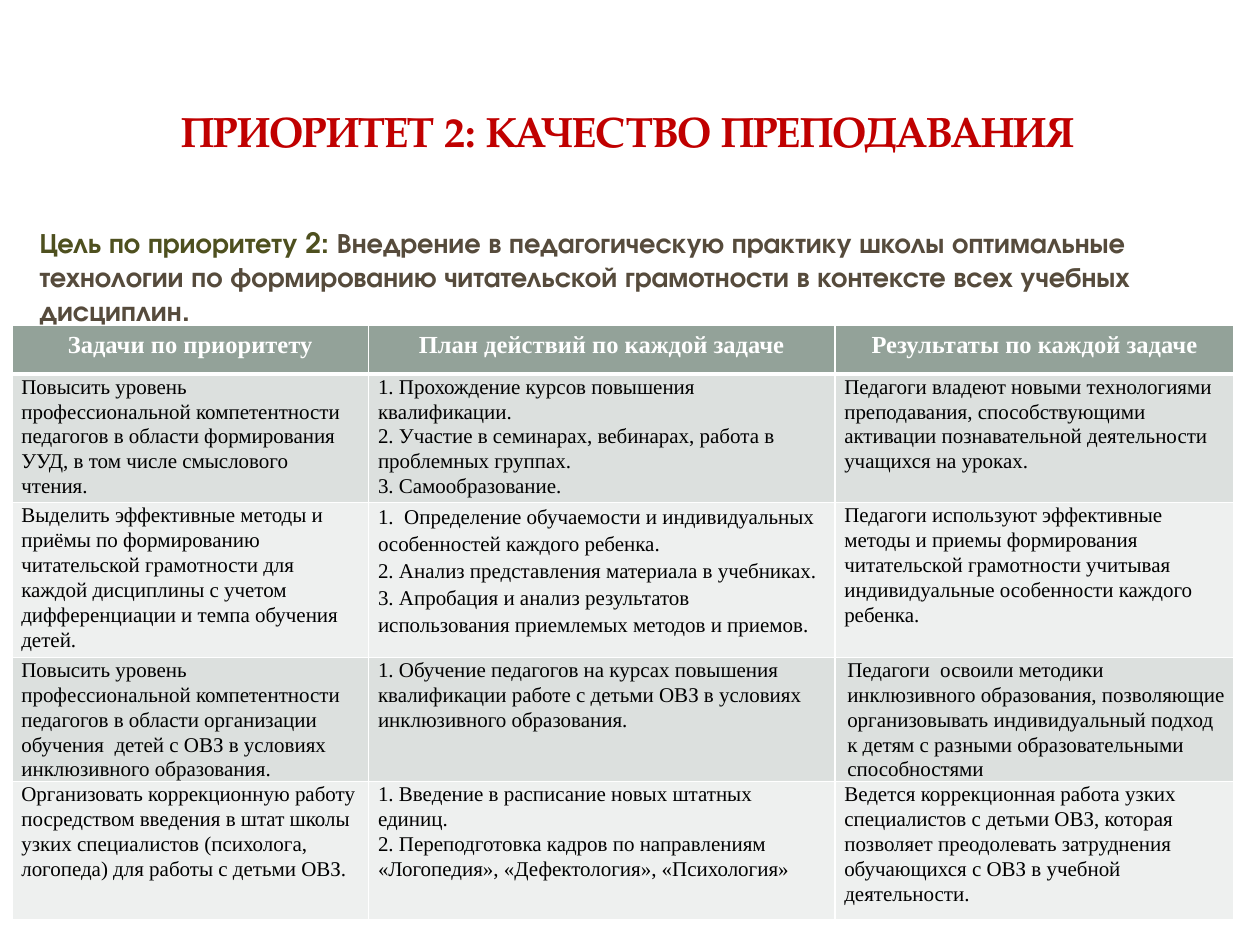
"""Build a slide on a school's teaching-quality priority with a table of tasks, actions and results."""
from lxml import etree
from pptx import Presentation
from pptx.dml.color import RGBColor
from pptx.enum.shapes import MSO_SHAPE
from pptx.enum.text import MSO_ANCHOR, PP_ALIGN
from pptx.oxml.ns import qn
from pptx.util import Cm, Pt

CENTER = PP_ALIGN.CENTER
LEFT = PP_ALIGN.LEFT
MIDDLE = MSO_ANCHOR.MIDDLE
TOP = MSO_ANCHOR.TOP
RECTANGLE = MSO_SHAPE.RECTANGLE
ROUNDED_RECTANGLE = MSO_SHAPE.ROUNDED_RECTANGLE

TITLE_FONT = {"name": "TeX Gyre Pagella", "size": Pt(24), "bold": True}
GOAL_FONT = {"name": "TeX Gyre Adventor", "size": Pt(16), "bold": True}
HEADER_FONT = {"name": "Times New Roman", "size": Pt(14), "bold": True}
BODY_FONT = {"name": "Times New Roman", "size": Pt(12), "bold": False}
BODY_MARGINS = {"margin_left": Cm(0.19), "margin_right": Cm(0.18), "margin_top": 0, "margin_bottom": 0}

BACKDROPS = [
    (ROUNDED_RECTANGLE, 0.25, 0.28, 24.89, 18.52, 100),
    (RECTANGLE, 0.76, 0.76, 23.88, 3.68, 83),
    (RECTANGLE, 1.04, 1.04, 23.29, 3.1, 100),
]
COLUMN_WIDTHS = [7.19, 9.4, 8.05]
ROW_HEIGHTS = [0.99, 2.59, 3.12, 2.49, 2.79]
BAND_FILLS = ["DCE0DE", "EEF0EF"]

HEADINGS = ["Задачи по приоритету", "План действий по каждой задаче", "Результаты по каждой задаче"]
TASKS = [
    [
        ["Повысить уровень профессиональной компетентности педагогов в области "
         "формирования УУД, в том числе смыслового чтения."],
        ["1. Прохождение курсов повышения квалификации.",
         "2. Участие в семинарах, вебинарах, работа в проблемных группах.",
         "3. Самообразование."],
        ["Педагоги владеют новыми технологиями преподавания, способствующими активации "
         "познавательной деятельности учащихся на уроках."],
    ],
    [
        ["Выделить эффективные методы и приёмы по формированию читательской грамотности "
         "для каждой дисциплины с учетом дифференциации и темпа обучения детей."],
        ["1.  Определение обучаемости и индивидуальных особенностей каждого ребенка.",
         "2. Анализ представления материала в учебниках.",
         "3. Апробация и анализ результатов использования приемлемых методов и приемов."],
        ["Педагоги используют эффективные методы и приемы формирования читательской "
         "грамотности учитывая индивидуальные особенности каждого ребенка."],
    ],
    [
        ["Повысить уровень профессиональной компетентности педагогов в области организации "
         "обучения  детей с ОВЗ в условиях инклюзивного образования."],
        ["1. Обучение педагогов на курсах повышения квалификации работе с детьми ОВЗ "
         "в условиях инклюзивного образования."],
        ["Педагоги  освоили методики инклюзивного образования, позволяющие организовывать "
         "индивидуальный подход к детям с разными образовательными способностями"],
    ],
    [
        ["Организовать коррекционную работу посредством введения в штат школы узких "
         "специалистов (психолога, логопеда) для работы с детьми ОВЗ."],
        ["1. Введение в расписание новых штатных единиц.",
         "2. Переподготовка кадров по направлениям «Логопедия», «Дефектология», «Психология»"],
        ["Ведется коррекционная работа узких специалистов с детьми ОВЗ, которая позволяет "
         "преодолевать затруднения обучающихся с ОВЗ в учебной деятельности."],
    ],
]


def paint(color_format, color):
    color_format.rgb = RGBColor.from_string(color)


def add_run(paragraph, text, font_values, color):
    run = paragraph.add_run()
    run.text = text
    for attribute, value in font_values.items():
        setattr(run.font, attribute, value)
    paint(run.font.color, color)


prs = Presentation()
prs.slide_width, prs.slide_height = Cm(25.4), Cm(19.05)
slide = prs.slides.add_slide(prs.slide_layouts[6])

for outline, left, top, width, height, opacity in BACKDROPS:
    backdrop = slide.shapes.add_shape(outline, Cm(left), Cm(top), Cm(width), Cm(height))
    backdrop.shadow.inherit = False
    backdrop.line.fill.background()
    backdrop.fill.solid()
    paint(backdrop.fill.fore_color, "FFFFFF")
    if outline == ROUNDED_RECTANGLE:
        backdrop.adjustments[0] = 0.02
    if opacity < 100:
        fill_color = backdrop._element.spPr.find(".//" + qn("a:srgbClr"))
        etree.SubElement(fill_color, qn("a:alpha"), val=str(opacity * 1000))

title = slide.shapes.add_textbox(Cm(1.19), Cm(1.14), Cm(22.94), Cm(3)).text_frame
title.word_wrap = True
title.vertical_anchor = MIDDLE
title.paragraphs[0].alignment = CENTER
add_run(title.paragraphs[0], "ПРИОРИТЕТ 2: КАЧЕСТВО ПРЕПОДАВАНИЯ", TITLE_FONT, "C00000")

plan = slide.shapes.add_table(
    len(ROW_HEIGHTS), len(COLUMN_WIDTHS), Cm(0.24), Cm(6.55),
    Cm(sum(COLUMN_WIDTHS)), Cm(sum(ROW_HEIGHTS))).table
for column, width in zip(plan.columns, COLUMN_WIDTHS):
    column.width = Cm(width)
for row, height in zip(plan.rows, ROW_HEIGHTS):
    row.height = Cm(height)

for row_index, entries in enumerate([[[heading] for heading in HEADINGS]] + TASKS):
    is_header = row_index == 0
    for column_index, lines in enumerate(entries):
        cell = plan.cell(row_index, column_index)
        cell.vertical_anchor = TOP
        if not is_header:
            for attribute, value in BODY_MARGINS.items():
                setattr(cell, attribute, value)
        if (row_index, column_index) == (3, 2):
            cell.margin_left = Cm(0.25)

        borders = {"a:lnL": 1, "a:lnR": 1, "a:lnT": 3 if row_index == 1 else 1, "a:lnB": 3 if is_header else 1}
        for tag, points in borders.items():
            border = etree.SubElement(cell._tc.get_or_add_tcPr(), qn(tag), w=str(Pt(points)))
            border_fill = etree.SubElement(border, qn("a:solidFill"))
            etree.SubElement(border_fill, qn("a:srgbClr"), val="FFFFFF")
        cell.fill.solid()
        paint(cell.fill.fore_color, "93A299" if is_header else BAND_FILLS[(row_index - 1) % 2])

        for line_index, line in enumerate(lines):
            frame = cell.text_frame
            paragraph = frame.add_paragraph() if line_index else frame.paragraphs[0]
            paragraph.alignment = CENTER if is_header else LEFT
            if not is_header:
                paragraph.line_spacing = Pt(15.4) if (row_index, column_index) == (2, 1) else Pt(14.2)
            add_run(paragraph, line, HEADER_FONT if is_header else BODY_FONT,
                    "FFFFFF" if is_header else "000000")

goal = slide.shapes.add_textbox(Cm(0.24), Cm(4.43), Cm(24.66), Cm(2.29)).text_frame
goal.word_wrap = True
goal.margin_left = Cm(0.56)
add_run(goal.paragraphs[0], "Цель по приоритету 2: ", GOAL_FONT, "4E501F")
add_run(goal.paragraphs[0],
        "Внедрение в педагогическую практику школы оптимальные технологии по формированию "
        "читательской грамотности в контексте всех учебных дисциплин.", GOAL_FONT, "564B3C")

prs.save("out.pptx")
